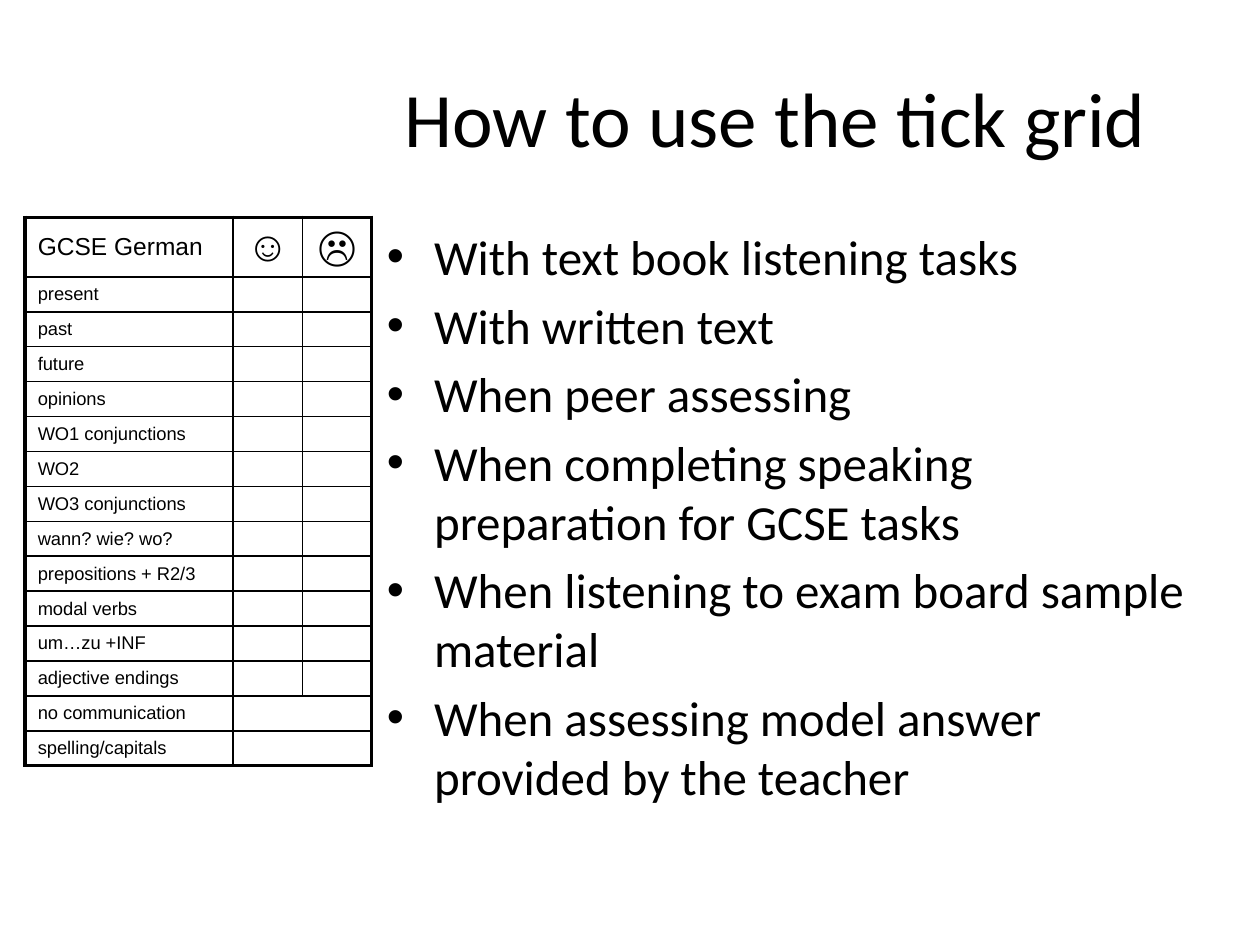
from dataclasses import dataclass

import lxml.etree
import pptx
import pptx.dml.color
import pptx.enum.text
import pptx.oxml.ns
import pptx.util


@dataclass(frozen=True)
class Theme:
    ink: pptx.dml.color.RGBColor = pptx.dml.color.RGBColor(0, 0, 0)
    text_font: str = "Calibri"
    grid_font: str = "Arial"
    title: float = 44
    bullet: float = 28
    heading: float = 14
    smiley: float = 24
    label: float = 10.5
    thin: float = 1
    thick: float = 2.25


THEME = Theme()
WIDTH, HEIGHT = pptx.util.Inches(10), pptx.util.Inches(7.5)
BULLETS = [
    "With text book listening tasks",
    "With written text",
    "When peer assessing",
    "When completing speaking preparation for GCSE tasks",
    "When listening to exam board sample material",
    "When assessing model answer provided by the teacher",
]
HEADINGS = ["GCSE German", "☺", "☹"]
TICKED = [
    "present", "past", "future", "opinions", "WO1 conjunctions", "WO2",
    "WO3 conjunctions", "wann? wie? wo?", "prepositions + R2/3",
    "modal verbs", "um…zu +INF", "adjective endings",
]
COMMENTED = ["no communication", "spelling/capitals"]
COLUMNS = [1.65, 0.55, 0.55]
HEADING_ROW, LABEL_ROW = 0.46, 0.27


def place(shape, left, top, width, height):
    box = {"left": left * WIDTH, "top": top * HEIGHT,
           "width": width * WIDTH, "height": height * HEIGHT}
    for name, value in box.items():
        setattr(shape, name, int(value))


def write(p, text, font, size):
    r = p.add_run()
    r.text = text
    for name, value in {"name": font, "size": pptx.util.Pt(size)}.items():
        setattr(r.font, name, value)
    r.font.color.rgb = THEME.ink


def fill_placeholder(shape, lines, size):
    tf = shape.text_frame
    for i, line in enumerate(lines):
        p = tf.paragraphs[0] if i == 0 else tf.add_paragraph()
        write(p, line, THEME.text_font, size)


def set_borders(cell, weights):
    tc_pr = cell._tc.get_or_add_tcPr()
    for side in "LRTB":
        ln = lxml.etree.SubElement(tc_pr, pptx.oxml.ns.qn(f"a:ln{side}"))
        ln.set("w", str(pptx.util.Pt(weights[side])))
        solid = lxml.etree.SubElement(ln, pptx.oxml.ns.qn("a:solidFill"))
        color = lxml.etree.SubElement(solid, pptx.oxml.ns.qn("a:srgbClr"))
        color.set("val", str(THEME.ink))


def fill_cell(cell, text, size, centred):
    p = cell.text_frame.paragraphs[0]
    if text:
        write(p, text, THEME.grid_font, size)
    else:
        end = lxml.etree.SubElement(p._p, pptx.oxml.ns.qn("a:endParaRPr"))
        end.set("sz", str(int(size * 100)))
    if centred:
        p.alignment = pptx.enum.text.PP_ALIGN.CENTER
    else:
        cell.vertical_anchor = pptx.enum.text.MSO_ANCHOR.MIDDLE


def add_tick_grid(s, left, top):
    labels = TICKED + COMMENTED
    rows = [HEADINGS] + [[label, "", ""] for label in labels]
    heights = [HEADING_ROW] + [LABEL_ROW] * len(labels)
    frame = s.shapes.add_table(
        len(rows), len(COLUMNS), int(left * WIDTH), int(top * HEIGHT),
        pptx.util.Inches(sum(COLUMNS)), pptx.util.Inches(sum(heights)))
    table = frame.table
    table.first_row = table.horz_banding = False
    for column, width in zip(table.columns, COLUMNS):
        column.width = pptx.util.Inches(width)
    for row, height in zip(table.rows, heights):
        row.height = pptx.util.Inches(height)
    last_row, last_column = len(rows) - 1, len(COLUMNS) - 1
    for i in range(len(TICKED) + 1, len(rows)):
        table.cell(i, 1).merge(table.cell(i, last_column))
    for i, row in enumerate(rows):
        for j, text in enumerate(row):
            cell = table.cell(i, j)
            outer = {"L": j == 0, "T": i == 0, "B": i == last_row,
                     "R": j == last_column or cell.is_merge_origin}
            set_borders(cell, {side: THEME.thick if edge else THEME.thin
                               for side, edge in outer.items()})
            cell.fill.background()
            heading = THEME.smiley if j else THEME.heading
            fill_cell(cell, text, THEME.label if i else heading, j > 0)


def main():
    prs = pptx.Presentation()
    prs.slide_width, prs.slide_height = WIDTH, HEIGHT
    s = prs.slides.add_slide(prs.slide_layouts[1])
    title, body = s.placeholders
    place(title, 0.281, 0.04, 0.669, 0.167)
    fill_placeholder(title, ["How to use the tick grid"], THEME.title)
    place(body, 0.297, 0.233, 0.653, 0.66)
    fill_placeholder(body, BULLETS, THEME.bullet)
    add_tick_grid(s, 0.02, 0.23)
    prs.save("out.pptx")


if __name__ == "__main__":
    main()
